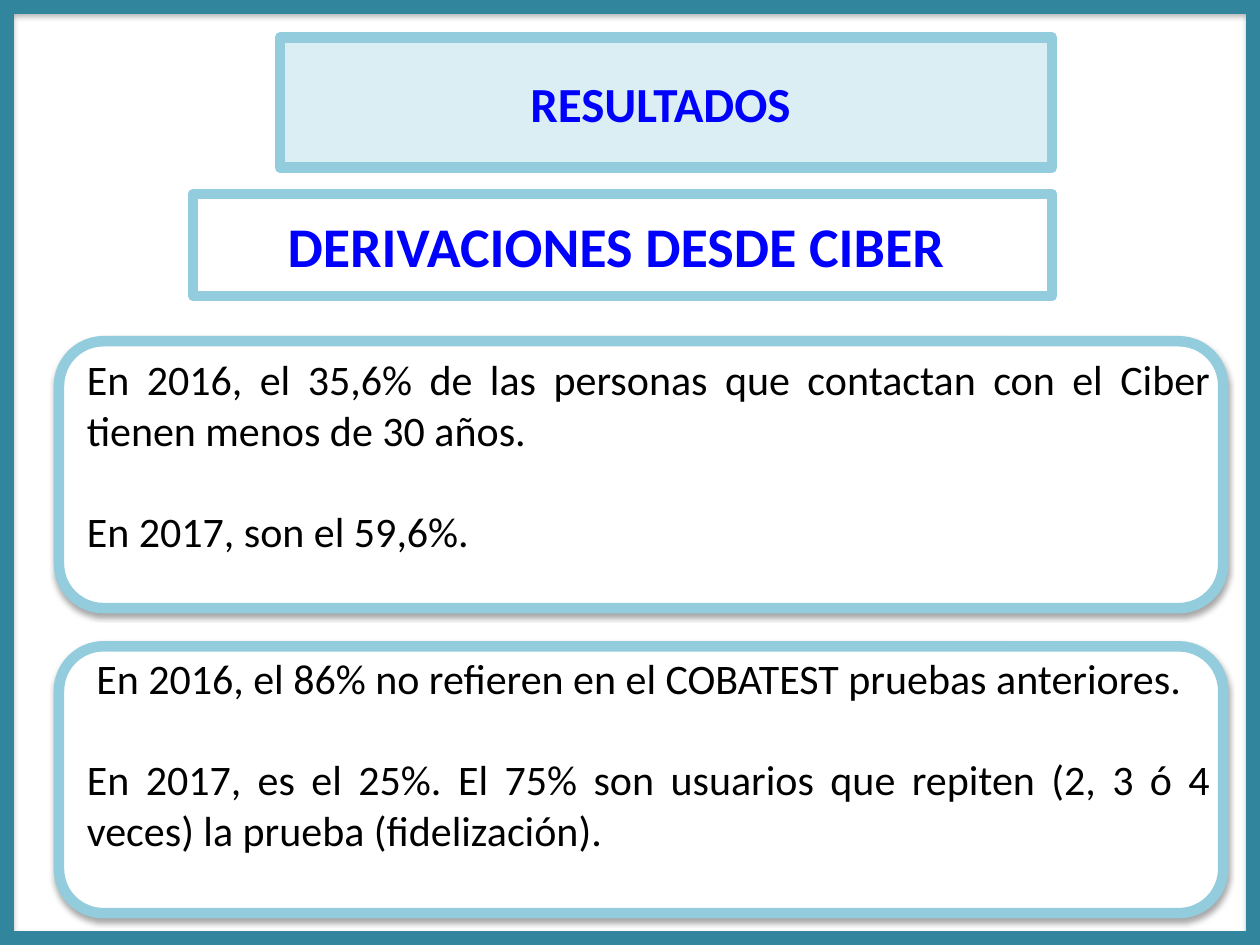
"""Build the results slide on referrals from the Ciber service."""
from pptx import Presentation
from pptx.dml.color import RGBColor
from pptx.enum.shapes import MSO_SHAPE as SHAPE
from pptx.enum.text import MSO_ANCHOR as ANCHOR, MSO_AUTO_SIZE as AUTO, PP_ALIGN as ALIGN
from pptx.util import Cm, Pt

TEAL, SKY, PALE, WHITE = "31859C", "93CDDD", "DBEEF4", "FFFFFF"
BLUE, BLACK = "0000FF", "000000"


def paint(sp, fill, line, width):
    """Set the fill and outline of a shape; no fill when fill is None."""
    if fill:
        sp.fill.solid()
        sp.fill.fore_color.rgb = RGBColor.from_string(fill)
    else:
        sp.fill.background()
    sp.line.color.rgb = RGBColor.from_string(line)
    sp.line.width = Pt(width)


def write(p, text, size, color, align, bold=False):
    """Put formatted text in a paragraph."""
    p.text = text
    p.alignment = align
    p.font.name = "Calibri"
    p.font.size = Pt(size)
    p.font.bold = bold
    p.font.color.rgb = RGBColor.from_string(color)


prs = Presentation()
prs.slide_width, prs.slide_height = Cm(25.4), Cm(19.05)
s = prs.slides.add_slide(prs.slide_layouts[5])

frame = s.shapes.add_shape(SHAPE.FRAME, 0, 0, prs.slide_width, prs.slide_height)
frame.adjustments[0] = 0.014
paint(frame, TEAL, TEAL, 0.75)

title = s.shapes.title
title.left, title.top, title.width, title.height = Cm(5.64), Cm(0.76), Cm(15.57), Cm(2.62)
subtitle = s.shapes.add_shape(SHAPE.RECTANGLE, Cm(3.89), Cm(3.91), Cm(17.32), Cm(2.06))
subtitle.shadow.inherit = False

headings = [
    (title, "RESULTADOS ", 28, PALE),
    (subtitle, "DERIVACIONES DESDE CIBER ", 32, None),
]
for sp, text, size, fill in headings:
    paint(sp, fill, SKY, 6)
    tf = sp.text_frame
    tf.word_wrap = True
    tf.auto_size = AUTO.NONE
    tf.vertical_anchor = ANCHOR.MIDDLE
    write(tf.paragraphs[0], text, size, BLUE, ALIGN.CENTER, bold=True)

panels = [
    (6.88, 7.01, [
        "En 2016, el 35,6% de las personas que contactan con el Ciber tienen menos de 30 años.",
        "En 2017, son el 59,6%.",
    ]),
    (13.03, 13.03, [
        " En 2016, el 86% no refieren en el COBATEST pruebas anteriores.",
        "En 2017, es el 25%. El 75% son usuarios que repiten (2, 3 ó 4 veces) la prueba (fidelización).",
    ]),
]
for top, text_top, lines in panels:
    panel = s.shapes.add_shape(SHAPE.ROUNDED_RECTANGLE, Cm(1.19), Cm(top), Cm(23.47), Cm(5.38))
    paint(panel, WHITE, SKY, 6)
    box = s.shapes.add_textbox(Cm(1.5), Cm(text_top), Cm(23.16), Cm(4.37))
    tf = box.text_frame
    tf.word_wrap = True
    tf.auto_size = AUTO.SHAPE_TO_FIT_TEXT
    for i, line in enumerate(lines):
        p = tf.add_paragraph() if i else tf.paragraphs[0]
        write(p, line, 24, BLACK, ALIGN.JUSTIFY)
        if i:
            p.space_before = Pt(29)

prs.save("out.pptx")
